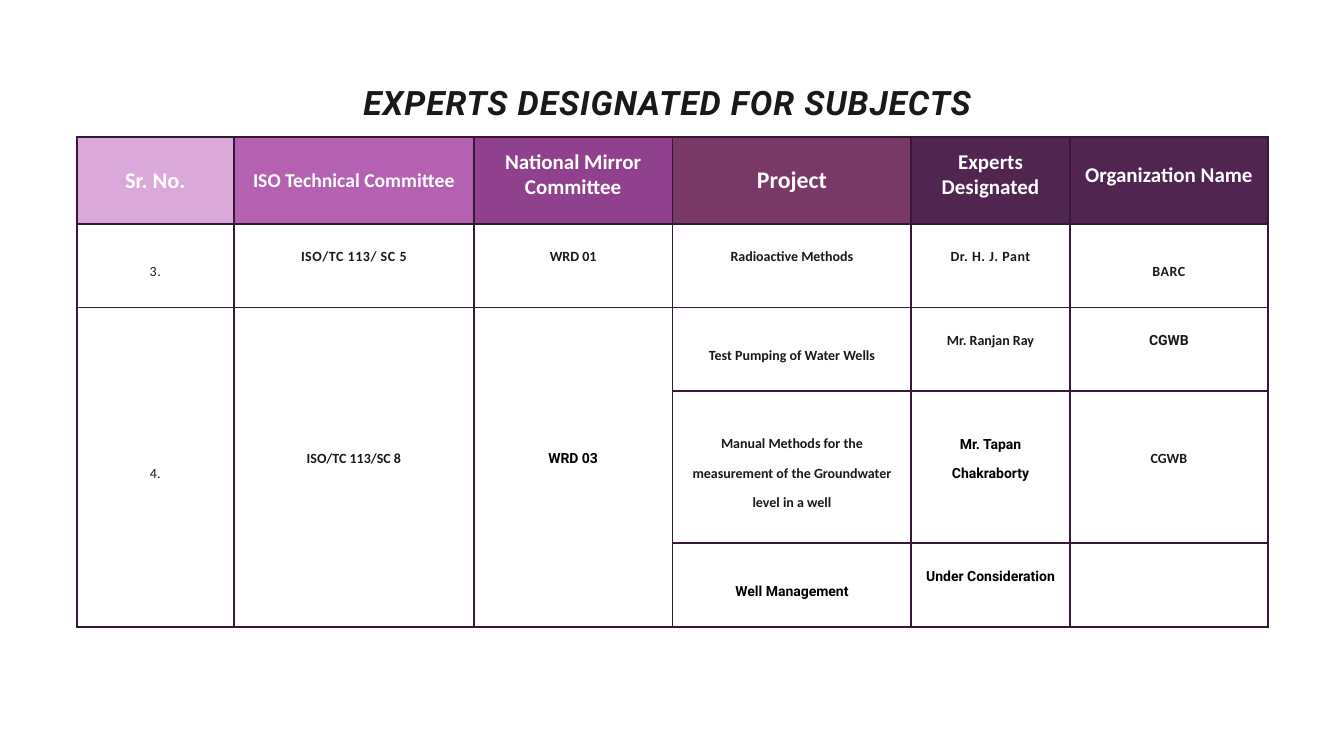
from dataclasses import dataclass

from lxml.etree import SubElement
from pptx import Presentation
from pptx.dml.color import RGBColor
from pptx.enum.text import MSO_ANCHOR, PP_ALIGN
from pptx.oxml.ns import qn
from pptx.util import Inches, Pt


@dataclass(frozen=True)
class Theme:
    sans: str = "Calibri"
    alt: str = "Roboto"
    ink: str = "191919"
    black: str = "000000"
    white: str = "FFFFFF"
    line: str = "341834"
    rule: float = 1.5
    title: float = 24
    body: float = 10
    lead: float = 21
    pad: float = 0.12
    lift: float = 0.29  # half line of text, as extra bottom margin
    nudge: float = 0.11


T = Theme()

COLS = [1.56, 2.38, 1.97, 2.37, 1.57, 1.97]
ROWS = [0.86, 0.83, 0.83, 1.51, 0.83]

# Header: text, size, fill, extra bottom margin
HEAD = [
    ("Sr. No.", 16, "DBA8DA", 0),
    ("ISO Technical Committee", 14, "B461B2", 0),
    ("National Mirror Committee", 15, "8F418D", T.nudge),
    ("Project", 17, "793966", 0),
    ("Experts Designated", 15, "50254F", T.nudge),
    ("Organization Name", 15, "50254F", T.nudge),
]

# Body styles
PLAIN = dict(bold=False)
WIDE = dict(gap=0.4)
ALT = dict(font=T.alt, color=T.black)

# Body: row, column, text, extra bottom margin, style
BODY = [
    (1, 0, "3.", 0, PLAIN | WIDE),
    (1, 1, "ISO/TC 113/ SC 5", T.lift, WIDE),
    (1, 2, "WRD 01", T.lift, {}),
    (1, 3, "Radioactive Methods", T.lift, {}),
    (1, 4, "Dr. H. J. Pant", T.lift, WIDE),
    (1, 5, "BARC", 0, WIDE),
    (2, 0, "4.", 0, PLAIN),
    (2, 1, "ISO/TC 113/SC 8", T.lift, {}),
    (2, 2, "WRD 03", T.lift, ALT),
    (2, 3, "Test Pumping of Water Wells", 0, {}),
    (2, 4, "Mr. Ranjan Ray", T.lift, {}),
    (2, 5, "CGWB", T.lift, dict(font=T.alt)),
    (3, 3, "Manual Methods for the measurement of the Groundwater level in a well", 0, {}),
    (3, 4, "Mr. Tapan Chakraborty", T.lift, ALT),
    (3, 5, "CGWB", T.lift, {}),
    (4, 3, "Well Management", 0, ALT),
    (4, 4, "Under Consideration", T.lift, ALT),
]


def write(frame, text, size=T.body, font=T.sans, color=T.ink, bold=True,
          italic=False, gap=0, lead=None):
    para = frame.paragraphs[0]
    para.alignment = PP_ALIGN.CENTER
    if lead:
        para.line_spacing = Pt(lead)
    run = para.add_run()
    run.text = text
    face = run.font
    face.name, face.size = font, Pt(size)
    face.bold, face.italic = bold, italic
    face.color.rgb = RGBColor.from_string(color)
    if gap:
        run._r.get_or_add_rPr().set("spc", str(round(gap * 100)))


def dress(cell, fill):
    """Set borders, fill and margins of a cell."""
    props = cell._tc.get_or_add_tcPr()
    for side in ("lnL", "lnR", "lnT", "lnB"):
        edge = SubElement(props, qn("a:" + side), w=str(Pt(T.rule)))
        paint = SubElement(edge, qn("a:solidFill"))
        SubElement(paint, qn("a:srgbClr"), val=T.line)
    cell.fill.solid()
    cell.fill.fore_color.rgb = RGBColor.from_string(fill)
    cell.vertical_anchor = MSO_ANCHOR.MIDDLE
    cell.margin_left = cell.margin_right = Inches(T.pad)
    cell.margin_top = cell.margin_bottom = Inches(T.pad)


def add_title(slide, x, y, w, h):
    box = slide.shapes.add_textbox(Inches(x), Inches(y), Inches(w), Inches(h))
    frame = box.text_frame
    frame.word_wrap = True
    frame.margin_left = frame.margin_right = 0
    frame.margin_top = frame.margin_bottom = 0
    write(frame, "EXPERTS DESIGNATED FOR SUBJECTS", T.title, T.alt,
          italic=True, gap=0.7, lead=31.4)


def add_grid(slide, x, y):
    table = slide.shapes.add_table(
        len(ROWS), len(COLS), Inches(x), Inches(y),
        Inches(sum(COLS)), Inches(sum(ROWS))).table
    for col, width in zip(table.columns, COLS):
        col.width = Inches(width)
    for row, height in zip(table.rows, ROWS):
        row.height = Inches(height)

    # Cell looks
    for r in range(len(ROWS)):
        for c, head in enumerate(HEAD):
            dress(table.cell(r, c), T.white if r else head[2])

    # One entry across three projects
    for c in range(3):
        table.cell(2, c).merge(table.cell(4, c))

    # Header text
    for c, (text, size, _, lift) in enumerate(HEAD):
        cell = table.cell(0, c)
        cell.margin_bottom = Inches(T.pad + lift)
        write(cell.text_frame, text, size, color=T.white)

    # Body text
    for r, c, text, lift, style in BODY:
        cell = table.cell(r, c)
        cell.margin_bottom = Inches(T.pad + lift)
        write(cell.text_frame, text, lead=T.lead, **style)


def main():
    deck = Presentation()
    deck.slide_width, deck.slide_height = Inches(13.33), Inches(7.5)
    slide = deck.slides.add_slide(deck.slide_layouts[6])
    add_grid(slide, 0.76, 1.36)
    add_title(slide, 2.37, 0.78, 8.5, 0.43)
    deck.save("out.pptx")


if __name__ == "__main__":
    main()
